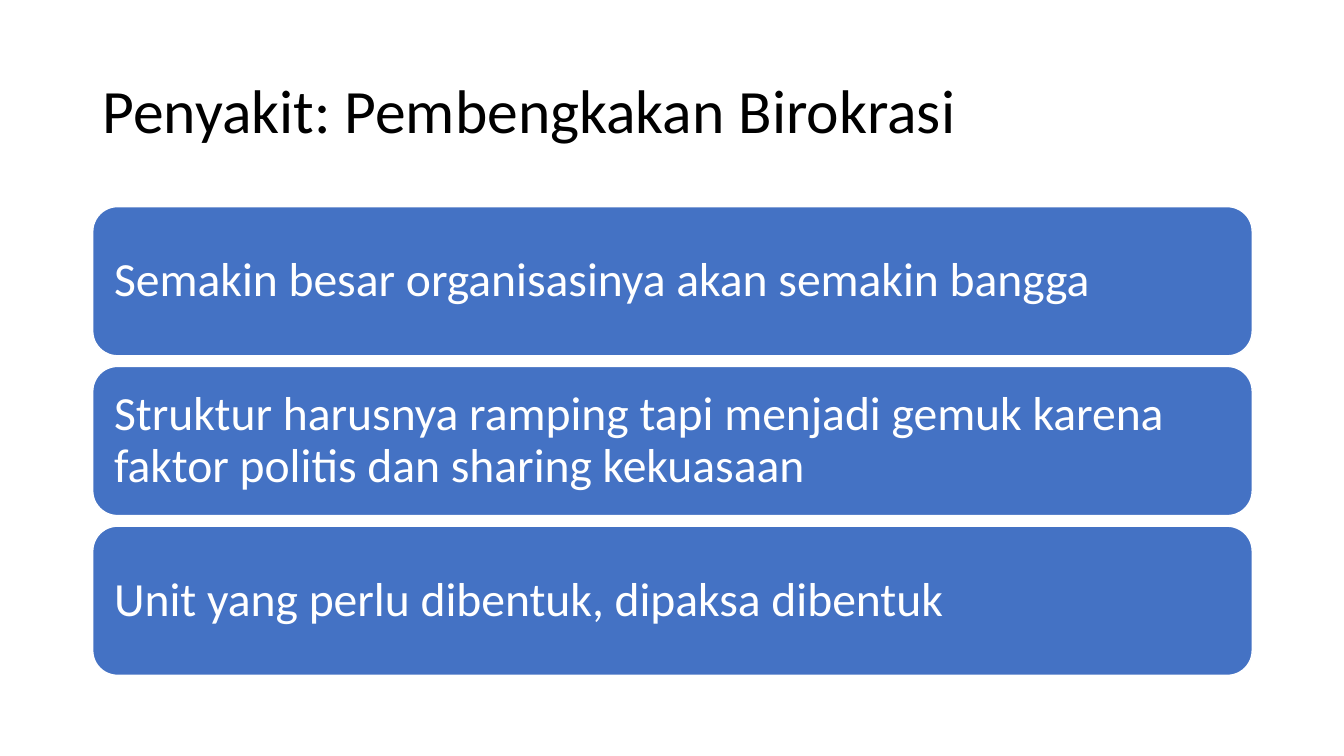
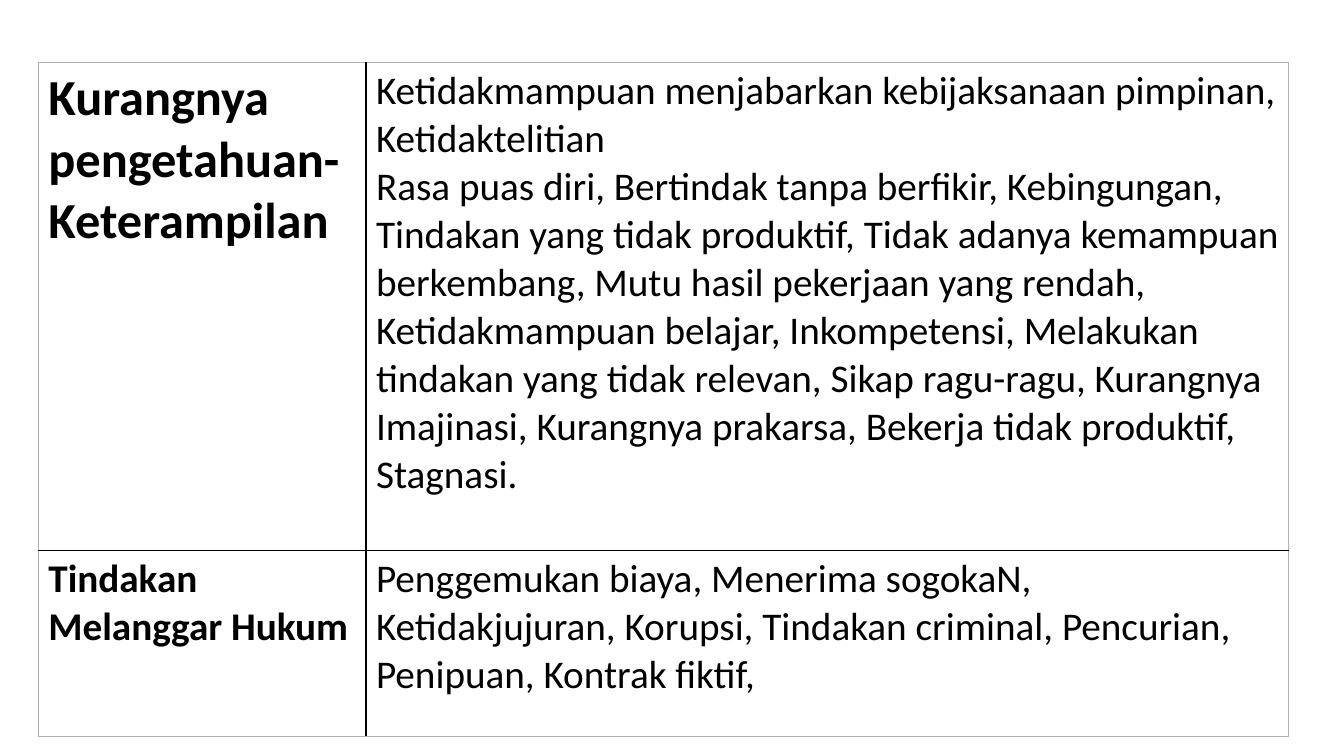
import dataclasses

import lxml.etree
import pptx
import pptx.dml.color
import pptx.enum.shapes
import pptx.enum.text
import pptx.oxml.ns
import pptx.util

Inches = pptx.util.Inches
Pt = pptx.util.Pt


@dataclasses.dataclass(frozen=True)
class Theme:
    font: str = "Calibri"
    text: str = "000000"
    accent: str = "4472C4"
    white: str = "FFFFFF"
    outer_rule: str = "B2B2B2"
    inner_rule: str = "000000"
    title_size: int = 44
    heading_size: int = 36
    bar_size: int = 34
    cell_size: int = 28


THEME = Theme()

BARS = [
    "Semakin besar organisasinya akan semakin bangga",
    "Struktur harusnya ramping tapi menjadi gemuk karena faktor politis dan sharing kekuasaan",
    "Unit yang perlu dibentuk, dipaksa dibentuk",
]

# Each row: heading, heading size, body paragraphs
BEHAVIOURS = [
    ("Kurangnya pengetahuan-Keterampilan", THEME.heading_size, [
        "Ketidakmampuan menjabarkan kebijaksanaan pimpinan, Ketidaktelitian",
        "Rasa puas diri, Bertindak tanpa berfikir, Kebingungan, Tindakan yang "
        "tidak produktif, Tidak adanya kemampuan berkembang, Mutu hasil pekerjaan "
        "yang rendah, Ketidakmampuan belajar, Inkompetensi, Melakukan tindakan "
        "yang tidak relevan, Sikap ragu-ragu, Kurangnya Imajinasi, Kurangnya "
        "prakarsa, Bekerja tidak produktif, Stagnasi.",
    ]),
    ("Tindakan Melanggar Hukum", THEME.cell_size, [
        "Penggemukan biaya, Menerima sogokaN, Ketidakjujuran, Korupsi, "
        "Tindakan criminal, Pencurian,  Penipuan, Kontrak fiktif,",
    ]),
]


def rgb(value):
    return pptx.dml.color.RGBColor.from_string(value)


def add_slide(prs):
    return prs.slides.add_slide(prs.slide_layouts[6])


def write(tf, paragraphs, size, color=THEME.text, bold=False, spacing=None):
    """Fill a text frame with left-aligned paragraphs of one style."""
    tf.word_wrap = True
    for i, text in enumerate(paragraphs):
        p = tf.paragraphs[0] if i == 0 else tf.add_paragraph()
        p.alignment = pptx.enum.text.PP_ALIGN.LEFT
        if spacing:
            p.line_spacing = spacing
        r = p.add_run()
        r.text = text
        r.font.name = THEME.font
        r.font.size = Pt(size)
        r.font.bold = bold
        r.font.color.rgb = rgb(color)


def add_title(slide, text):
    sp = slide.shapes.add_textbox(Inches(0.92), Inches(0.4), Inches(11.5), Inches(1.45))
    sp.text_frame.vertical_anchor = pptx.enum.text.MSO_ANCHOR.MIDDLE
    write(sp.text_frame, [text], THEME.title_size, spacing=0.9)


def add_bar(slide, top, height, text):
    sp = slide.shapes.add_shape(
        pptx.enum.shapes.MSO_SHAPE.ROUNDED_RECTANGLE,
        Inches(0.92), Inches(top), Inches(11.5), Inches(height))
    sp.shadow.inherit = False
    sp.fill.solid()
    sp.fill.fore_color.rgb = rgb(THEME.accent)
    sp.line.color.rgb = rgb(THEME.white)
    sp.line.width = Pt(1)
    tf = sp.text_frame
    tf.vertical_anchor = pptx.enum.text.MSO_ANCHOR.MIDDLE
    tf.margin_left = tf.margin_right = tf.margin_top = tf.margin_bottom = Inches(0.14)
    write(tf, [text], THEME.bar_size, THEME.white, spacing=0.9)


def set_borders(cell, colors):
    """Draw the left, right, top and bottom edges in the given colours."""
    qn = pptx.oxml.ns.qn
    tc_pr = cell._tc.get_or_add_tcPr()
    for i, (side, color) in enumerate(zip("LRTB", colors)):
        ln = lxml.etree.Element(qn(f"a:ln{side}"), w=str(Pt(1)))
        fill = lxml.etree.SubElement(ln, qn("a:solidFill"))
        lxml.etree.SubElement(fill, qn("a:srgbClr"), val=color)
        tc_pr.insert(i, ln)


def add_behaviour_table(slide, rows, widths, heights):
    table = slide.shapes.add_table(
        len(heights), len(widths), Inches(0.38), Inches(0.62),
        Inches(sum(widths)), Inches(sum(heights))).table
    table.first_row = table.horz_banding = False
    for column, width in zip(table.columns, widths):
        column.width = Inches(width)
    for row, height in zip(table.rows, heights):
        row.height = Inches(height)

    last_row, last_col = len(heights) - 1, len(widths) - 1
    for i, (heading, size, body) in enumerate(rows):
        write(table.cell(i, 0).text_frame, [heading], size, bold=True)
        write(table.cell(i, 1).text_frame, body, THEME.cell_size)
        for j in range(len(widths)):
            cell = table.cell(i, j)
            cell.fill.background()
            on_edge = (j == 0, j == last_col, i == 0, i == last_row)
            set_borders(cell, [THEME.outer_rule if edge else THEME.inner_rule
                               for edge in on_edge])


def build_bureaucracy_slide(prs):
    slide = add_slide(prs)
    add_title(slide, "Penyakit: Pembengkakan Birokrasi")
    # Bars share the space between top and bottom with equal gaps
    top, bottom, height = 2.05, 6.7, 1.48
    pitch = (bottom - top - height) / (len(BARS) - 1)
    for i, text in enumerate(BARS):
        add_bar(slide, top + i * pitch, height, text)


def build_behaviour_slide(prs):
    add_behaviour_table(add_slide(prs), BEHAVIOURS, [3.25, 9.15], [4.84, 1.85])


def main():
    prs = pptx.Presentation()
    prs.slide_width = Inches(13.33)
    prs.slide_height = Inches(7.5)
    build_bureaucracy_slide(prs)
    build_behaviour_slide(prs)
    prs.save("out.pptx")


if __name__ == "__main__":
    main()
